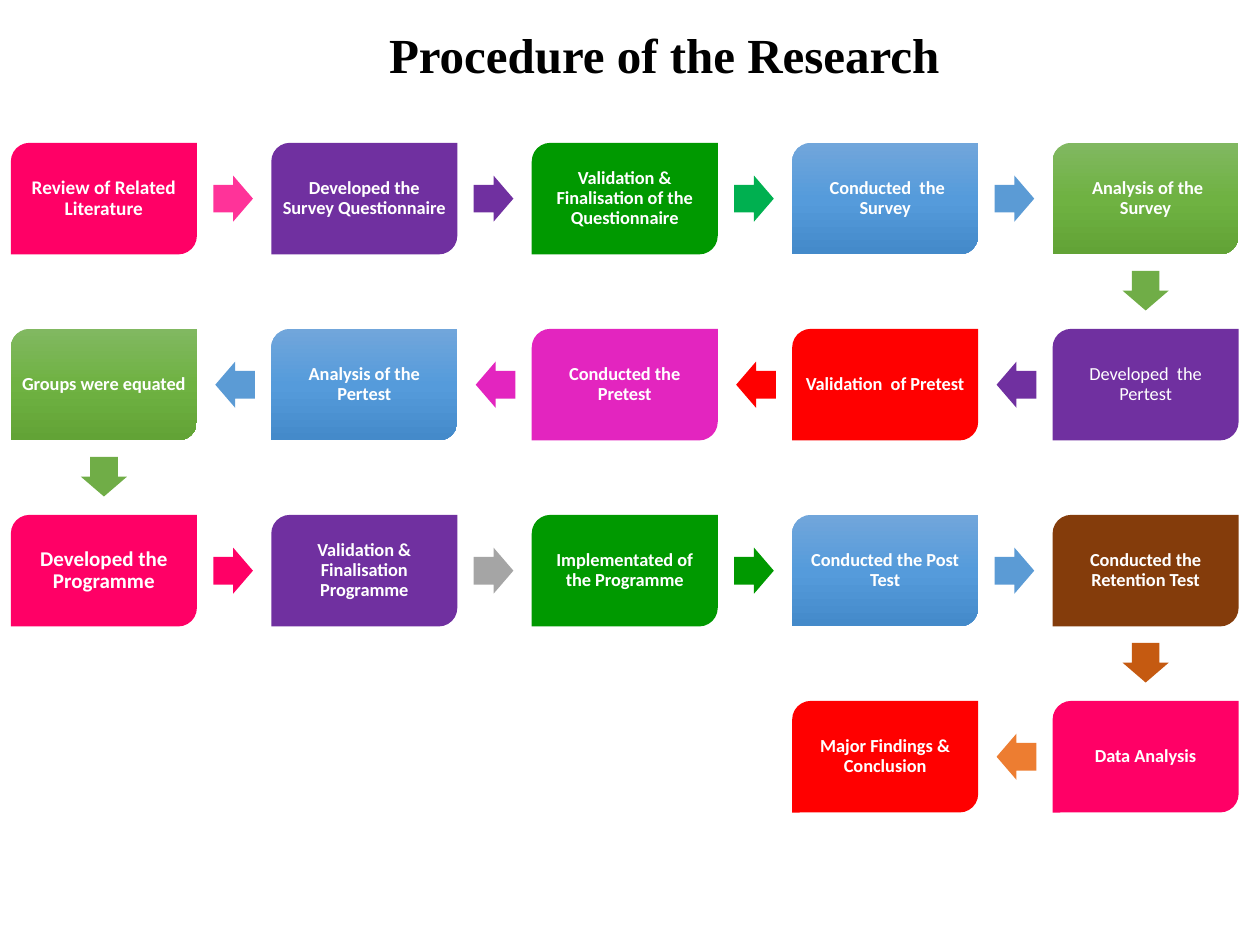
from copy import deepcopy
from itertools import pairwise

from pptx import Presentation
from pptx.dml.color import RGBColor
from pptx.enum.shapes import MSO_SHAPE
from pptx.enum.text import MSO_ANCHOR, PP_ALIGN
from pptx.util import Cm, Pt

TITLE = "Procedure of the Research"

# Text, card fill, fill of the arrow to the next card
STEPS = [
    ("Review of Related Literature", "rose", "pink"),
    ("Developed the Survey Questionnaire", "purple", "purple"),
    ("Validation & Finalisation of the Questionnaire", "green", "emerald"),
    (" Conducted  the Survey", "sky", "blue"),
    (" Analysis of the Survey", "leaf", "lime"),
    ("Developed  the Pertest", "purple", "purple"),
    ("Validation  of Pretest", "red", "red"),
    ("Conducted the Pretest", "magenta", "magenta"),
    ("Analysis of the Pertest", "sky", "blue"),
    ("Groups were equated", "leaf", "lime"),
    ("Developed the Programme", "rose", "rose"),
    ("Validation & Finalisation Programme", "purple", "grey"),
    ("Implementated of the Programme", "green", "green"),
    ("Conducted the Post Test", "sky", "blue"),
    ("Conducted the Retention Test", "brown", "rust"),
    ("Data Analysis", "rose", "orange"),
    ("Major Findings & Conclusion", "red", None),
]
SIZES = {"Review of Related Literature": 11, "Developed the Programme": 12}
PLAIN = {"Developed  the Pertest"}

THEME = {
    "head": ("Times New Roman", 28, "000000"),
    "body": ("Calibri", 10.5, "FFFFFF"),
    "fills": {
        "rose": "FF0066", "pink": "FF3399", "purple": "7030A0",
        "green": "009900", "emerald": "00B050", "blue": "5B9BD5",
        "lime": "70AD47", "red": "FF0000", "magenta": "E325BF",
        "grey": "A5A5A5", "brown": "843C0B", "rust": "C55A11",
        "orange": "ED7D31",
        "sky": ("71A6DB", "559BDB", "448ACA"),
        "leaf": ("81B861", "6FB242", "62A336"),
    },
}

# Grid, in centimetres
COLS = 5
LEFT, TOP = 0.22, 2.88
STEP_X, STEP_Y = 5.25, 3.75
CARD_W, CARD_H = 3.75, 2.25
ARROW_W, ARROW_H = 0.8, 0.93
BACK = 0.02  # arrows sit slightly nearer to the card they leave
PAD = 0.1


def center(index):
    """Centre of a card; the path turns round at the end of each row."""
    row, col = divmod(index, COLS)
    if row % 2:
        col = COLS - 1 - col
    return LEFT + col * STEP_X + CARD_W / 2, TOP + row * STEP_Y + CARD_H / 2


def paint(fill, name):
    """Solid colour, or a top-to-bottom gradient of three even stops."""
    tone = THEME["fills"][name]
    if isinstance(tone, str):
        fill.solid()
        fill.fore_color.rgb = RGBColor.from_string(tone)
        return
    fill.gradient()
    fill.gradient_angle = 270
    last = fill.gradient_stops[1]._gs
    last.addprevious(deepcopy(last))
    for n, (stop, shade) in enumerate(zip(fill.gradient_stops, tone)):
        stop.color.rgb = RGBColor.from_string(shade)
        stop.position = n / 2


def put(slide, kind, mid, size, name):
    """Add a borderless shape centred on a point."""
    (x, y), (w, h) = mid, size
    shape = slide.shapes.add_shape(
        kind, Cm(x - w / 2), Cm(y - h / 2), Cm(w), Cm(h))
    shape.shadow.inherit = False
    shape.line.fill.background()
    paint(shape.fill, name)
    return shape


def write(frame, text, style, size=None, bold=True):
    face, base, tone = style
    frame.text = text
    frame.word_wrap = True
    frame.vertical_anchor = MSO_ANCHOR.MIDDLE
    para = frame.paragraphs[0]
    para.alignment = PP_ALIGN.CENTER
    para.line_spacing = 0.9
    font = para.runs[0].font
    font.name, font.size, font.bold = face, Pt(size or base), bold
    font.color.rgb = RGBColor.from_string(tone)


def add_card(slide, index):
    text, name, _ = STEPS[index]
    card = put(slide, MSO_SHAPE.ROUND_2_DIAG_RECTANGLE, center(index),
               (CARD_W, CARD_H), name)
    frame = card.text_frame
    frame.margin_left = frame.margin_right = Cm(PAD)
    frame.margin_top = frame.margin_bottom = Cm(PAD)
    write(frame, text, THEME["body"], SIZES.get(text), text not in PLAIN)


def add_arrow(slide, start, end):
    (x1, y1), (x2, y2) = center(start), center(end)
    down = y2 > y1
    side = 1 if x2 > x1 else -1
    mid = ((x1 + x2) / 2 - (0 if down else side * BACK),
           (y1 + y2) / 2 - (BACK if down else 0))
    arrow = put(slide, MSO_SHAPE.RIGHT_ARROW, mid,
                (ARROW_W, ARROW_H), STEPS[start][2])
    arrow.adjustments[0], arrow.adjustments[1] = 0.6, 0.5
    arrow.rotation = 90 if down else 0 if side > 0 else 180


def main():
    deck = Presentation()
    deck.slide_width, deck.slide_height = Cm(25.4), Cm(19.05)
    slide = deck.slides.add_slide(deck.slide_layouts[5])
    title = slide.shapes.title
    title.left, title.top = Cm(4.88), Cm(0.43)
    title.width, title.height = Cm(17.02), Cm(1.45)
    write(title.text_frame, TITLE, THEME["head"])
    for index in range(len(STEPS)):
        add_card(slide, index)
    for start, end in pairwise(range(len(STEPS))):
        add_arrow(slide, start, end)
    deck.save("out.pptx")


if __name__ == "__main__":
    main()
